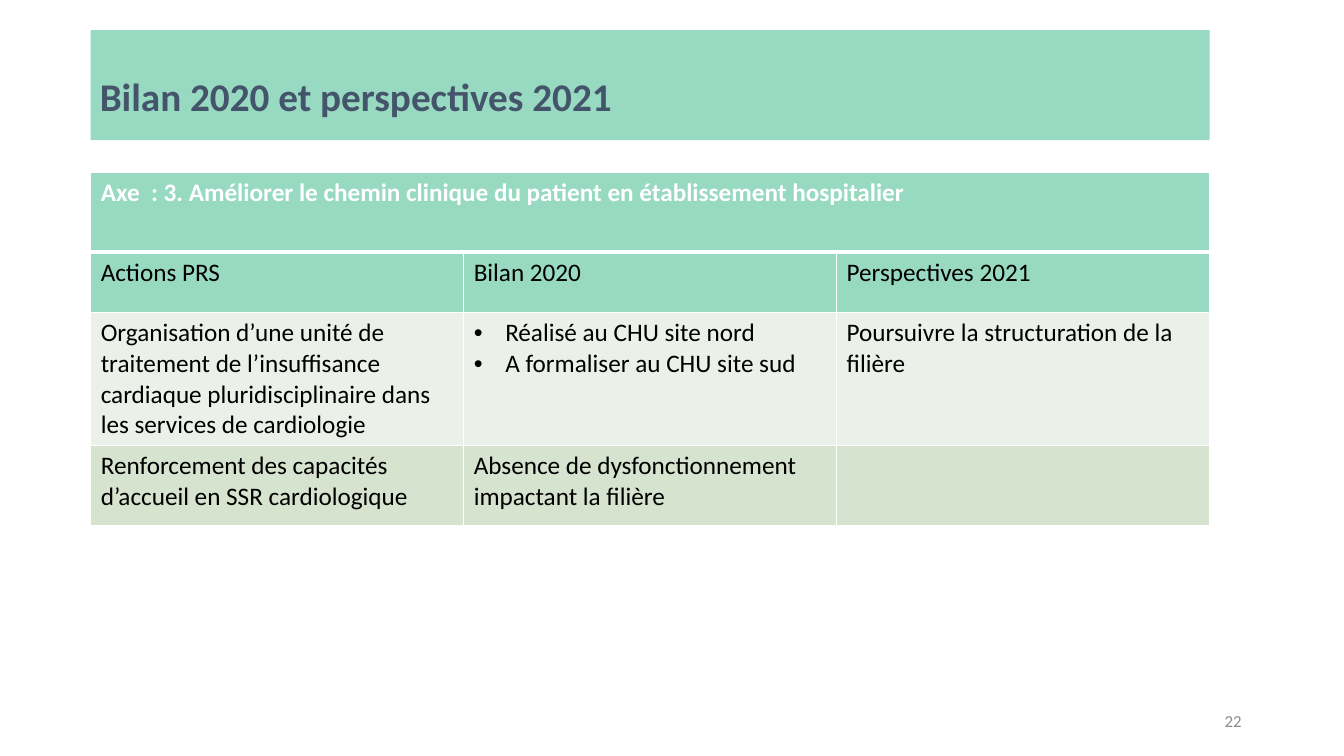
from lxml import etree
from pptx import Presentation
from pptx.dml.color import RGBColor
from pptx.enum.text import MSO_ANCHOR, PP_ALIGN
from pptx.oxml.ns import qn
from pptx.util import Pt

MIDDLE, RIGHT, LEFT = MSO_ANCHOR.MIDDLE, PP_ALIGN.RIGHT, PP_ALIGN.LEFT
TITLE = "Bilan 2020 et perspectives 2021"
NUMBER = "22"
ROWS = [
    ["Axe  : 3. Améliorer le chemin clinique du patient en établissement hospitalier", "", ""],
    ["Actions PRS", "Bilan 2020", "Perspectives 2021"],
    ["Organisation d’une unité de traitement de l’insuffisance cardiaque "
     "pluridisciplinaire dans les services de cardiologie",
     ["Réalisé au CHU site nord", "A formaliser au CHU site sud"],
     "Poursuivre la structuration de la filière"],
    ["Renforcement des capacités d’accueil en SSR cardiologique",
     "Absence de dysfonctionnement impactant la filière", ""],
]
GREEN, WHITE, BLACK = "98DAC1", "FFFFFF", "000000"
FILLS = [GREEN, GREEN, "EBF1E9", "D5E3CF"]
HEIGHTS = [56.9, 43.2, 94.5, 56.9]
X, WIDE = 64.8, 799.2
TOP = 123.1
INDENT = 22.5


def color(code):
    return RGBColor.from_string(code)


def paint(shape, code):
    shape.fill.solid()
    shape.fill.fore_color.rgb = color(code)


def style(para, size, code, bold=False):
    font = para.font
    for name, value in {"name": "Calibri", "size": Pt(size), "bold": bold}.items():
        setattr(font, name, value)
    font.color.rgb = color(code)


def bullet(para):
    props = para._p.get_or_add_pPr()
    props.set("marL", str(Pt(INDENT)))
    props.set("indent", str(-Pt(INDENT)))
    etree.SubElement(props, qn("a:buFont")).set("typeface", "Arial")
    etree.SubElement(props, qn("a:buChar")).set("char", "•")


def border(cell, widths):
    props = cell._tc.get_or_add_tcPr()
    for side, width in widths.items():
        line = etree.SubElement(props, qn("a:ln" + side), w=str(Pt(width)))
        fill = etree.SubElement(line, qn("a:solidFill"))
        etree.SubElement(fill, qn("a:srgbClr")).set("val", WHITE)


def fill_table(table):
    for col in table.columns:
        col.width = Pt(WIDE / 3)
    for r, row in enumerate(ROWS):
        table.rows[r].height = Pt(HEIGHTS[r])
        for c, content in enumerate(row):
            cell = table.cell(r, c)
            border(cell, {"L": 1, "R": 1, "T": 3 if r == 1 else 1, "B": 3 if r == 0 else 1})
            paint(cell, FILLS[r])
            listed = isinstance(content, list)
            cell.text = "\n".join(content) if listed else content
            for para in cell.text_frame.paragraphs:
                if listed:
                    bullet(para)
                style(para, 18, BLACK if r else WHITE, r == 0)
    table.cell(0, 0).merge(table.cell(0, 2))


deck = Presentation()
deck.slide_width, deck.slide_height = Pt(960), Pt(540)
slide = deck.slides.add_slide(deck.slide_layouts[5])

title = slide.shapes.title
title.left, title.top, title.width, title.height = Pt(X), Pt(21.6), Pt(WIDE), Pt(78.5)
paint(title, GREEN)
frame = title.text_frame
frame.text = TITLE
margins = {"margin_left": 6.5, "margin_right": 6.5, "margin_top": 21.6, "margin_bottom": 3}
for name, value in margins.items():
    setattr(frame, name, Pt(value))
frame.vertical_anchor = MIDDLE
head = frame.paragraphs[0]
head.alignment, head.line_spacing = LEFT, 0.93
style(head, 28, "44546A", True)

grid = slide.shapes.add_table(len(ROWS), 3, Pt(X), Pt(TOP), Pt(WIDE), Pt(sum(HEIGHTS)))
fill_table(grid.table)

box = slide.shapes.add_textbox(Pt(678), Pt(500.5), Pt(216), Pt(28.8))
frame = box.text_frame
frame.word_wrap, frame.vertical_anchor = True, MIDDLE
frame.text = NUMBER
frame.paragraphs[0].alignment = RIGHT
style(frame.paragraphs[0], 12, "8C8C8C")

deck.save("out.pptx")
